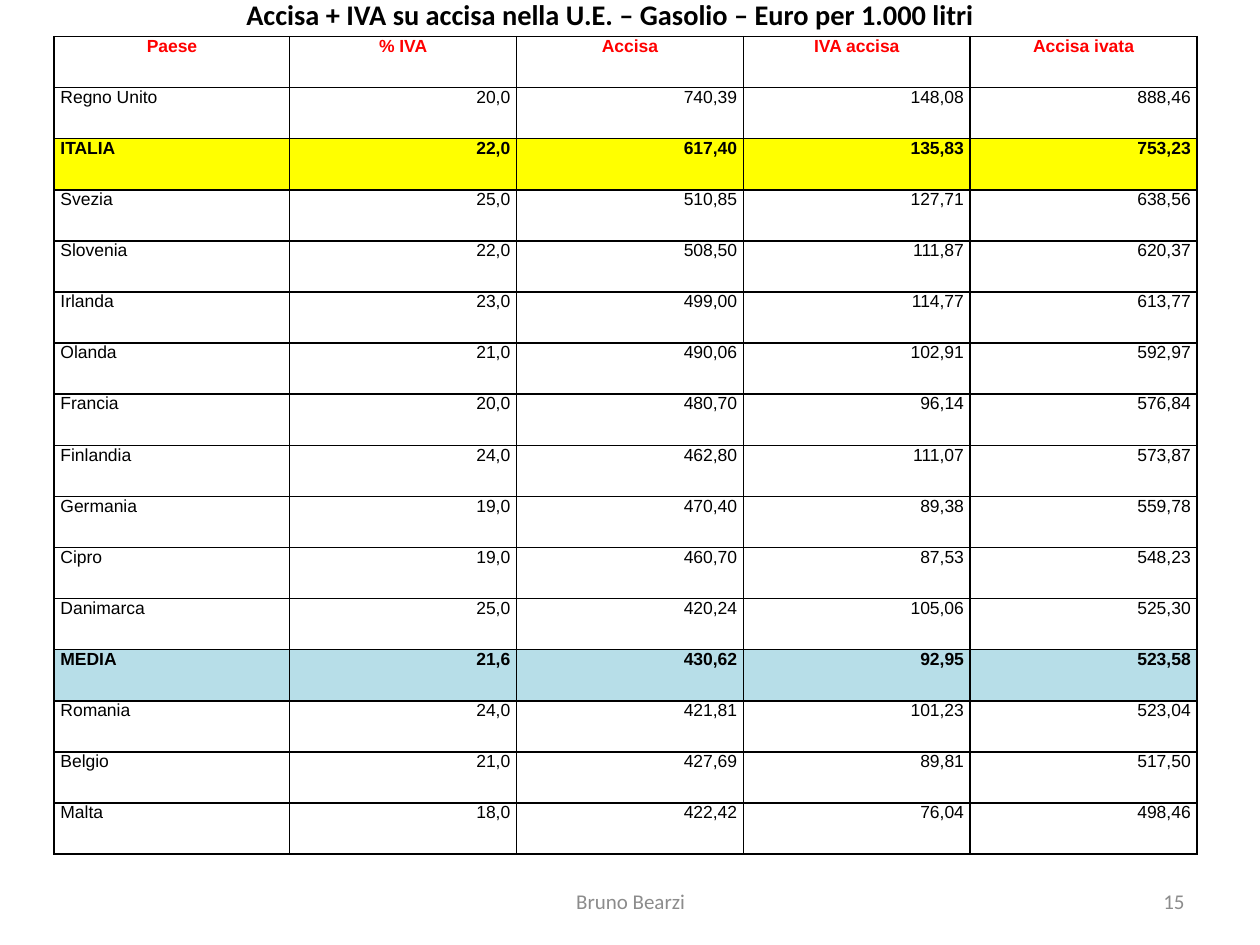
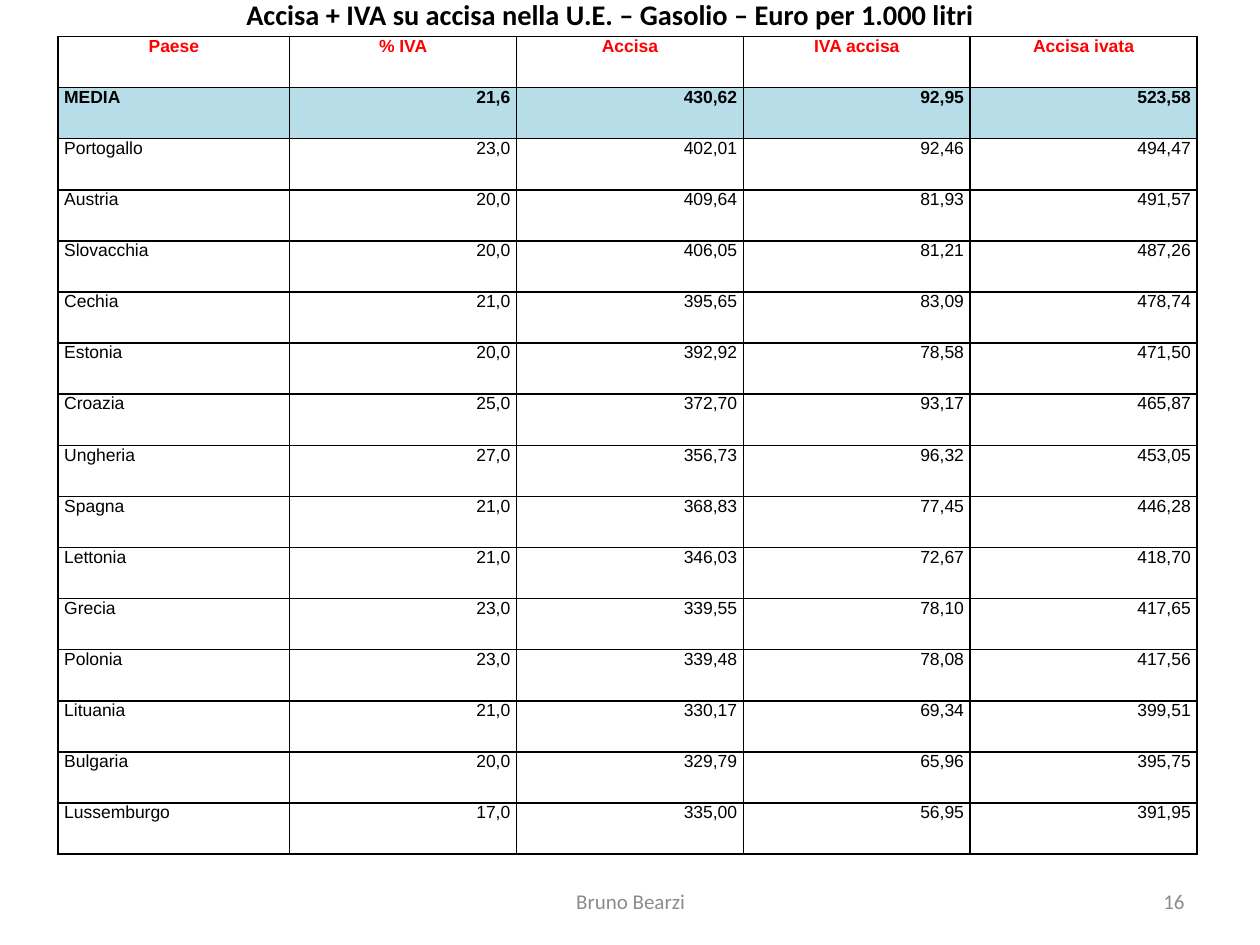
from lxml.etree import SubElement
from pptx import Presentation
from pptx.dml.color import RGBColor
from pptx.enum.text import MSO_ANCHOR, PP_ALIGN
from pptx.oxml.ns import qn
from pptx.util import Inches, Pt

BLACK = RGBColor(0x00, 0x00, 0x00)
RED = RGBColor(0xFF, 0x00, 0x00)
GREY = RGBColor(0x8C, 0x8C, 0x8C)
YELLOW = RGBColor(0xFF, 0xFF, 0x00)
LIGHT_BLUE = RGBColor(0xB7, 0xDE, 0xE8)

TITLE = "Accisa + IVA su accisa nella U.E. – Gasolio – Euro per 1.000 litri"
AUTHOR = "Bruno Bearzi"
HEADERS = ("Paese", "% IVA", "Accisa", "IVA accisa", "Accisa ivata")
HIGHLIGHTS = {"ITALIA": YELLOW, "MEDIA": LIGHT_BLUE}
MEDIA = ("MEDIA", "21,6", "430,62", "92,95", "523,58")

ABOVE_AVERAGE = [
    ("Regno Unito", "20,0", "740,39", "148,08", "888,46"),
    ("ITALIA", "22,0", "617,40", "135,83", "753,23"),
    ("Svezia", "25,0", "510,85", "127,71", "638,56"),
    ("Slovenia", "22,0", "508,50", "111,87", "620,37"),
    ("Irlanda", "23,0", "499,00", "114,77", "613,77"),
    ("Olanda", "21,0", "490,06", "102,91", "592,97"),
    ("Francia", "20,0", "480,70", "96,14", "576,84"),
    ("Finlandia", "24,0", "462,80", "111,07", "573,87"),
    ("Germania", "19,0", "470,40", "89,38", "559,78"),
    ("Cipro", "19,0", "460,70", "87,53", "548,23"),
    ("Danimarca", "25,0", "420,24", "105,06", "525,30"),
    MEDIA,
    ("Romania", "24,0", "421,81", "101,23", "523,04"),
    ("Belgio", "21,0", "427,69", "89,81", "517,50"),
    ("Malta", "18,0", "422,42", "76,04", "498,46"),
]

BELOW_AVERAGE = [
    MEDIA,
    ("Portogallo", "23,0", "402,01", "92,46", "494,47"),
    ("Austria", "20,0", "409,64", "81,93", "491,57"),
    ("Slovacchia", "20,0", "406,05", "81,21", "487,26"),
    ("Cechia", "21,0", "395,65", "83,09", "478,74"),
    ("Estonia", "20,0", "392,92", "78,58", "471,50"),
    ("Croazia", "25,0", "372,70", "93,17", "465,87"),
    ("Ungheria", "27,0", "356,73", "96,32", "453,05"),
    ("Spagna", "21,0", "368,83", "77,45", "446,28"),
    ("Lettonia", "21,0", "346,03", "72,67", "418,70"),
    ("Grecia", "23,0", "339,55", "78,10", "417,65"),
    ("Polonia", "23,0", "339,48", "78,08", "417,56"),
    ("Lituania", "21,0", "330,17", "69,34", "399,51"),
    ("Bulgaria", "20,0", "329,79", "65,96", "395,75"),
    ("Lussemburgo", "17,0", "335,00", "56,95", "391,95"),
]


class Deck:
    text_font = "Calibri"
    table_font = "Arial"
    table_top, table_right, table_height = 0.29, 9.5, 6.49
    value_width = 1.8

    def __init__(self):
        self.prs = Presentation()
        self.prs.slide_width = Inches(10)
        self.prs.slide_height = Inches(7.5)

    def add_slide(self):
        self.s = self.prs.slides.add_slide(self.prs.slide_layouts[6])

    def style(self, p, name, size, color, bold, align):
        p.alignment = align
        p.font.name = name
        p.font.size = Pt(size)
        p.font.color.rgb = color
        p.font.bold = bold

    def text(self, text, x, y, w, h, size, color, align, bold=False):
        tf = self.s.shapes.add_textbox(Inches(x), Inches(y), Inches(w), Inches(h)).text_frame
        tf.word_wrap = True
        tf.vertical_anchor = MSO_ANCHOR.MIDDLE
        tf.margin_top = tf.margin_bottom = 0
        p = tf.paragraphs[0]
        p.text = text
        self.style(p, self.text_font, size, color, bold, align)

    def title(self, text):
        self.text(text, 0.34, 0, 9, 0.23, 16.2, BLACK, PP_ALIGN.CENTER, True)

    def footer(self, number):
        self.text(str(number), 7.17, 6.95, 2.33, 0.4, 12, GREY, PP_ALIGN.RIGHT)
        self.text(AUTHOR, 3.42, 6.95, 3.17, 0.4, 12, GREY, PP_ALIGN.CENTER)

    def borders(self, cell):
        tcPr = cell._tc.get_or_add_tcPr()
        for side in ("a:lnL", "a:lnR", "a:lnT", "a:lnB"):
            ln = SubElement(tcPr, qn(side), w=str(Pt(1)))
            fill = SubElement(ln, qn("a:solidFill"))
            SubElement(fill, qn("a:srgbClr"), val=str(BLACK))

    def cell(self, cell, text, color, bold, align, fill):
        cell.margin_left = cell.margin_right = Inches(0.05)
        cell.margin_top = cell.margin_bottom = 0
        self.borders(cell)
        if fill is None:
            cell.fill.background()
        else:
            cell.fill.solid()
            cell.fill.fore_color.rgb = fill
        p = cell.text_frame.paragraphs[0]
        p.text = text
        self.style(p, self.table_font, 10, color, bold, align)

    def table(self, rows, left):
        width = self.table_right - left
        table = self.s.shapes.add_table(
            len(rows) + 1, len(HEADERS), Inches(left), Inches(self.table_top),
            Inches(width), Inches(self.table_height)).table
        table.first_row = table.horz_banding = False
        values = len(HEADERS) - 1
        for c, column in enumerate(table.columns):
            column.width = Inches(self.value_width if c else width - values * self.value_width)
        for c, header in enumerate(HEADERS):
            self.cell(table.cell(0, c), header, RED, True, PP_ALIGN.CENTER, None)
        for r, row in enumerate(rows, 1):
            fill = HIGHLIGHTS.get(row[0])
            for c, value in enumerate(row):
                align = PP_ALIGN.RIGHT if c else PP_ALIGN.LEFT
                self.cell(table.cell(r, c), value, BLACK, fill is not None, align, fill)


def main():
    deck = Deck()
    for number, rows, left in ((15, ABOVE_AVERAGE, 0.43), (16, BELOW_AVERAGE, 0.46)):
        deck.add_slide()
        deck.title(TITLE)
        deck.table(rows, left)
        deck.footer(number)
    deck.prs.save("out.pptx")


if __name__ == "__main__":
    main()
